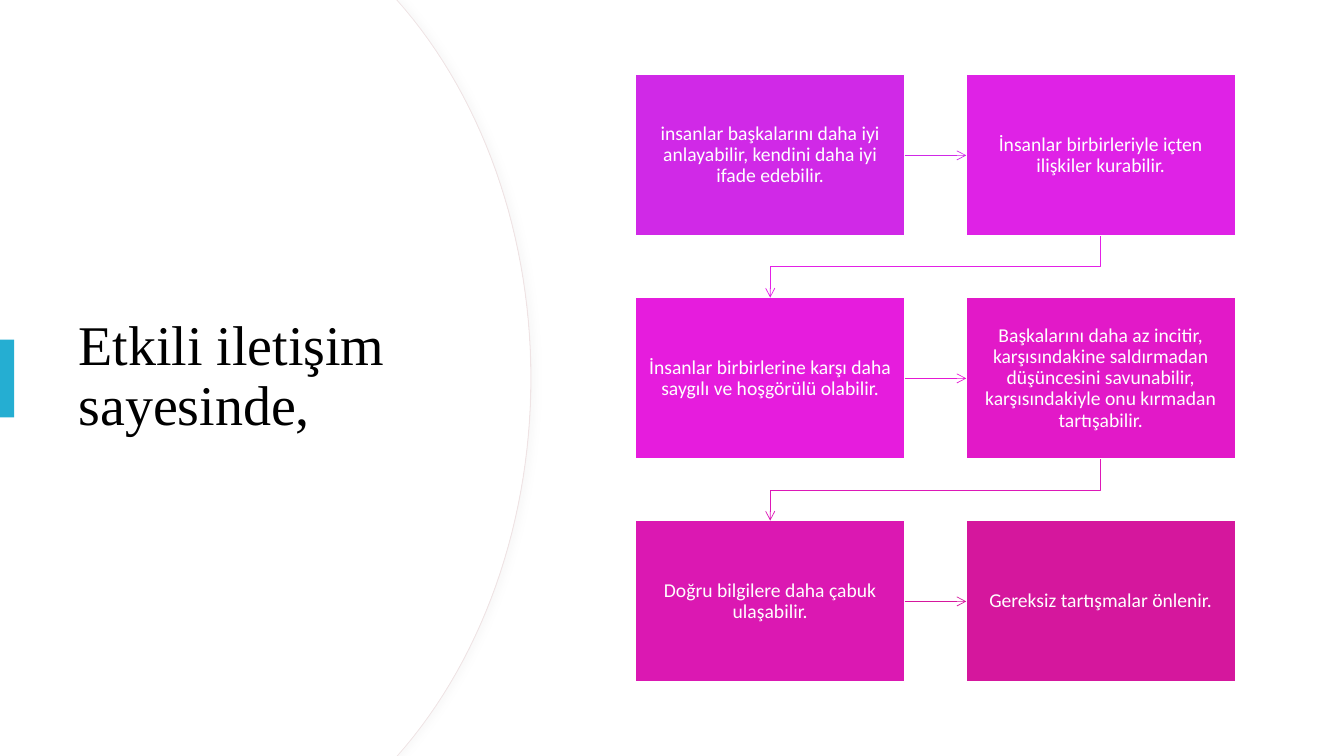
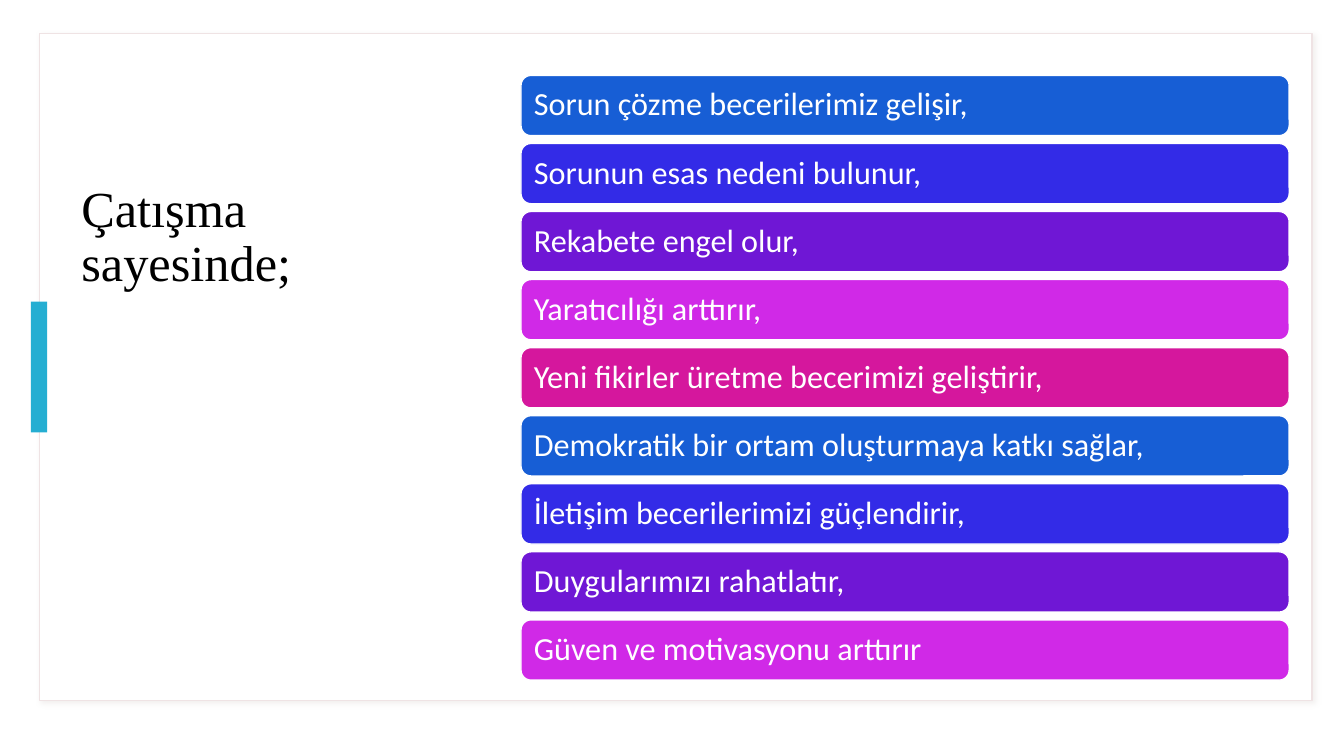
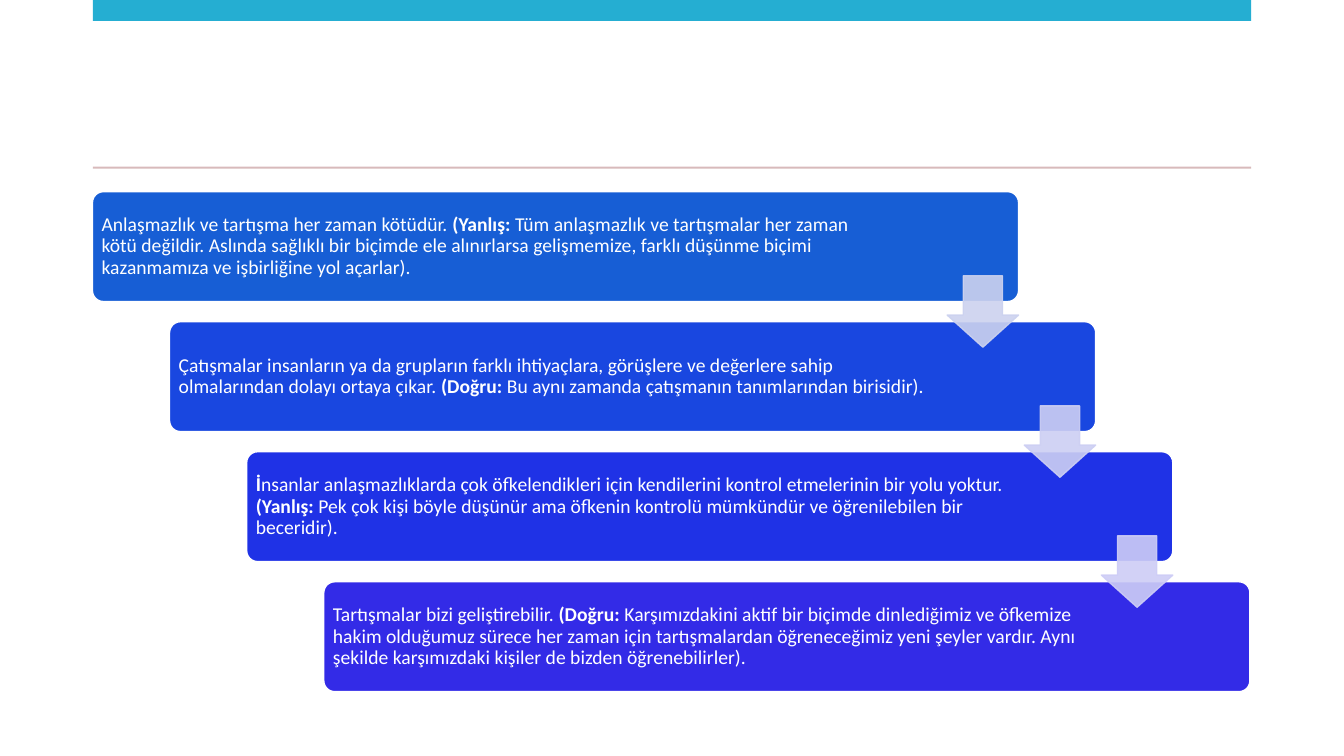
from math import asin, cos, sin

from lxml.etree import SubElement
from pptx import Presentation
from pptx.dml.color import RGBColor
from pptx.enum.shapes import MSO_CONNECTOR, MSO_SHAPE
from pptx.enum.text import MSO_ANCHOR, MSO_AUTO_SIZE, PP_ALIGN
from pptx.oxml.ns import qn
from pptx.util import Cm, Pt

COLORS = {
    "white": "FFFFFF", "black": "000000", "accent": "25AED2",
    "outline": "EFE3E4", "rule": "D8BABB",
    "curve_shadow": "D9D9D9", "panel_shadow": "D3CBC8",
    "blue": "175ED5", "royal": "1947E0", "cobalt": "1F32E6",
    "indigo": "332BE7", "violet": "6F17D5", "orchid": "D029E7",
    "fuchsia": "DF22E6", "magenta": "E61CDD", "rose": "E219C8",
    "cerise": "DB18B2", "pink": "D5179D",
    "link_fuchsia": "E321E6", "link_rose": "E519D3", "link_cerise": "DD18B7",
    "arrow_1": "CCD2EF", "arrow_2": "CDCFF3", "arrow_3": "CECDF6",
}
RGB = {name: RGBColor.from_string(value) for name, value in COLORS.items()}
TITLE_FONT, BODY_FONT = "Times New Roman", "Calibri"
TITLE_ONLY, BLANK = 5, 6


def add_block(page, kind, left, top, width, height, fill, line=None):
    """Add a preset shape, measured in cm, with a plain fill and a 1 pt line."""
    block = page.shapes.add_shape(kind, Cm(left), Cm(top), Cm(width), Cm(height))
    block.shadow.inherit = False
    block.fill.solid()
    block.fill.fore_color.rgb = RGB[fill]
    if line:
        block.line.color.rgb = RGB[line]
        block.line.width = Pt(1)
    else:
        block.line.fill.background()
    return block


def write(shape, text, size, font, color, margins, align=PP_ALIGN.LEFT,
          anchor=MSO_ANCHOR.MIDDLE):
    """Fill the shape with one paragraph; parts between asterisks are bold."""
    frame = shape.text_frame
    frame.word_wrap = True
    frame.auto_size = MSO_AUTO_SIZE.NONE
    frame.vertical_anchor = anchor
    (frame.margin_left, frame.margin_top,
     frame.margin_right, frame.margin_bottom) = [Cm(margin) for margin in margins]
    para = frame.paragraphs[0]
    para.alignment = align
    para.line_spacing = 0.9
    para.font.size = Pt(size)
    para.font.name = font
    para.font.color.rgb = RGB[color]
    for index, part in enumerate(text.split("*")):
        if part:
            span = para.add_run()
            span.text = part
            if index % 2:
                span.font.bold = True


deck = Presentation()
deck.slide_width, deck.slide_height = Cm(33.87), Cm(19.05)
benefits_page, conflict_page, beliefs_page = [
    deck.slides.add_slide(deck.slide_layouts[layout])
    for layout in (TITLE_ONLY, TITLE_ONLY, BLANK)
]

# Backgrounds: a clipped ellipse on the first slide, a panel on the second.
# The plain inner ellipse leaves the outline visible along the arc only.
center_x, center_y, radius_y = 3.4, 9.53, 12.7
reach, steps = asin(0.75), 60
angles = [reach * (2 * step / steps - 1) for step in range(steps + 1)]
curves = []
for radius_x in (9.98, 9.96):
    arc = [(Cm(center_x + radius_x * cos(angle)), Cm(center_y + radius_y * sin(angle)))
           for angle in angles]
    builder = benefits_page.shapes.build_freeform(0, 0)
    builder.add_line_segments([*arc, (0, deck.slide_height)], close=True)
    curve = builder.convert_to_shape()
    curve.shadow.inherit = False
    curve.fill.solid()
    curve.fill.fore_color.rgb = RGB["white"]
    curve.line.fill.background()
    curves.append(curve)
outer_curve = curves[0]
outer_curve.line.color.rgb = RGB["outline"]
outer_curve.line.width = Pt(0.75)

panel = add_block(conflict_page, MSO_SHAPE.RECTANGLE, 0.99, 0.84, 32.08, 16.81,
                  "white", "outline")

for shape, color, degrees, opacity in (
    (outer_curve, "curve_shadow", 0, 15),
    (panel, "panel_shadow", 45, 30),
):
    effects = shape.element.spPr.find(qn("a:effectLst"))
    shadow = SubElement(effects, qn("a:outerShdw"), blurRad=str(Pt(4)),
                        dist=str(Pt(3)), dir=str(degrees * 60000))
    shade = SubElement(shadow, qn("a:srgbClr"), val=COLORS[color])
    SubElement(shade, qn("a:alpha"), val=str(opacity * 1000))

# Accent bars
for page, left, top, width, height, color in (
    (benefits_page, 0, 8.56, 0.36, 1.96, "accent"),
    (conflict_page, 0.78, 7.6, 0.41, 3.3, "accent"),
    (beliefs_page, 2.34, 0, 29.19, 0.53, "accent"),
    (beliefs_page, 2.34, 4.2, 29.19, 0.05, "rule"),
):
    add_block(page, MSO_SHAPE.RECTANGLE, left, top, width, height, color)

# Titles, brought in front of the backgrounds
for page, text, size, anchor, left, top, width, height in (
    (benefits_page, "Etkili iletişim sayesinde,", 40, MSO_ANCHOR.MIDDLE,
     1.73, 3.23, 10.01, 12.57),
    (conflict_page, "Çatışma sayesinde;", 36, MSO_ANCHOR.TOP,
     1.8, 4.5, 8.61, 9.78),
):
    title = page.shapes.title
    title.left, title.top, title.width, title.height = (
        Cm(left), Cm(top), Cm(width), Cm(height))
    write(title, text, size, TITLE_FONT, "black", (0.25, 0.13, 0.25, 0.13),
          anchor=anchor)
    page.shapes.element.append(title.element)

# Slide 1: boxes in two columns, linked in reading order
benefits = [
    ("insanlar başkalarını daha iyi anlayabilir, kendini daha iyi ifade edebilir.", "orchid"),
    ("İnsanlar birbirleriyle içten ilişkiler kurabilir.", "fuchsia"),
    ("İnsanlar birbirlerine karşı daha saygılı ve hoşgörülü olabilir.", "magenta"),
    ("Başkalarını daha az incitir, karşısındakine saldırmadan düşüncesini savunabilir, "
     "karşısındakiyle onu kırmadan tartışabilir.", "rose"),
    ("Doğru bilgilere daha çabuk ulaşabilir.", "cerise"),
    ("Gereksiz tartışmalar önlenir.", "pink"),
]
boxes = []
for index, (text, color) in enumerate(benefits):
    row, column = divmod(index, 2)
    box = add_block(benefits_page, MSO_SHAPE.RECTANGLE, 16.02 + 8.33 * column,
                    1.88 + 5.62 * row, 6.78, 4.07, color, "white")
    write(box, text, 14, BODY_FONT, "white", (0.33, 0.36, 0.33, 0.36), PP_ALIGN.CENTER)
    boxes.append(box)

link_colors = ["orchid", "link_fuchsia", "link_rose", "link_cerise", "pink"]
for index, color in enumerate(link_colors):
    box, following = boxes[index], boxes[index + 1]
    if index % 2 == 0:
        link = benefits_page.shapes.add_connector(MSO_CONNECTOR.STRAIGHT, 0, 0, 0, 0)
        link.begin_connect(box, 3)
        link.end_connect(following, 1)
    else:
        # An elbow that leaves downwards is a level one turned by 90 degrees
        drop = following.top - box.top - box.height
        shift = box.left - following.left
        middle_x = (box.left + following.left + box.width) // 2
        middle_y = following.top - drop // 2
        link = benefits_page.shapes.add_connector(
            MSO_CONNECTOR.ELBOW, middle_x - drop // 2, middle_y - shift // 2,
            middle_x + drop // 2, middle_y + shift // 2)
        link.element.spPr.find(qn("a:xfrm")).set("rot", str(90 * 60000))
    link.line.color.rgb = RGB[color]
    link.line.width = Pt(0.5)
    SubElement(link.element.spPr.find(qn("a:ln")), qn("a:tailEnd"), type="arrow")
    SubElement(link.element.spPr, qn("a:effectLst"))

# Slide 2: a stack of bars whose colours run in a cycle
gains = [
    "Sorun çözme becerilerimiz gelişir,",
    "Sorunun esas nedeni bulunur,",
    "Rekabete engel olur,",
    "Yaratıcılığı arttırır,",
    "Yeni fikirler üretme becerimizi geliştirir,",
    "Demokratik bir ortam oluşturmaya katkı sağlar,",
    "İletişim becerilerimizi güçlendirir,",
    "Duygularımızı rahatlatır,",
    "Güven ve motivasyonu arttırır",
]
cycle = ["blue", "indigo", "violet", "orchid", "pink"]
first_top, last_top = 1.9, 15.62
bar_pitch = (last_top - first_top) / (len(gains) - 1)
for index, text in enumerate(gains):
    bar = add_block(conflict_page, MSO_SHAPE.ROUNDED_RECTANGLE, 13.13,
                    first_top + bar_pitch * index, 19.36, 1.52,
                    cycle[index % len(cycle)], "white")
    write(bar, text, 23, BODY_FONT, "white", (0.25, 0.25, 0.25, 0.25))

# Slide 3: steps going down to the right, with an arrow between neighbours
beliefs = [
    ("Anlaşmazlık ve tartışma her zaman kötüdür. *(Yanlış: *Tüm anlaşmazlık ve tartışmalar "
     "her zaman kötü değildir. Aslında sağlıklı bir biçimde ele alınırlarsa gelişmemize, "
     "farklı düşünme biçimi kazanmamıza ve işbirliğine yol açarlar).", "blue"),
    ("Çatışmalar insanların ya da grupların farklı ihtiyaçlara, görüşlere ve değerlere sahip "
     "olmalarından dolayı ortaya çıkar. *(Doğru: *Bu aynı zamanda çatışmanın "
     "tanımlarından birisidir).", "royal"),
    ("*İ*nsanlar anlaşmazlıklarda çok öfkelendikleri için kendilerini kontrol etmelerinin bir "
     "yolu yoktur.*(Yanlış: *Pek çok kişi böyle düşünür ama öfkenin kontrolü mümkündür ve "
     "öğrenilebilen bir beceridir).", "cobalt"),
    ("Tartışmalar bizi geliştirebilir. *(Doğru: *Karşımızdakini aktif bir biçimde "
     "dinlediğimiz ve öfkemize hakim olduğumuz sürece her zaman için tartışmalardan "
     "öğreneceğimiz yeni şeyler vardır. Aynı şekilde karşımızdaki kişiler de bizden "
     "öğrenebilirler).", "indigo"),
]
first_corner, last_corner = (2.33, 4.83), (8.16, 14.66)
gaps = len(beliefs) - 1
corners = [[start + (end - start) * index / gaps
            for start, end in zip(first_corner, last_corner)]
           for index in range(len(beliefs))]
for (text, color), (left, top) in zip(beliefs, corners):
    step_box = add_block(beliefs_page, MSO_SHAPE.ROUNDED_RECTANGLE, left, top,
                         23.34, 2.77, color, "white")
    step_box.adjustments[0] = 0.1
    write(step_box, text, 14, BODY_FONT, "white", (0.15, 0.15, 3.91, 0.15))

for color, (left, top) in zip(("arrow_1", "arrow_2", "arrow_3"), corners):
    arrow = add_block(beliefs_page, MSO_SHAPE.DOWN_ARROW, left + 21.54, top + 2.12,
                      1.8, 1.8, color, color)
    arrow.adjustments[0], arrow.adjustments[1] = 0.55, 0.45
    for paint in arrow.element.spPr.iter(qn("a:srgbClr")):
        SubElement(paint, qn("a:alpha"), val="90000")

deck.save("out.pptx")
